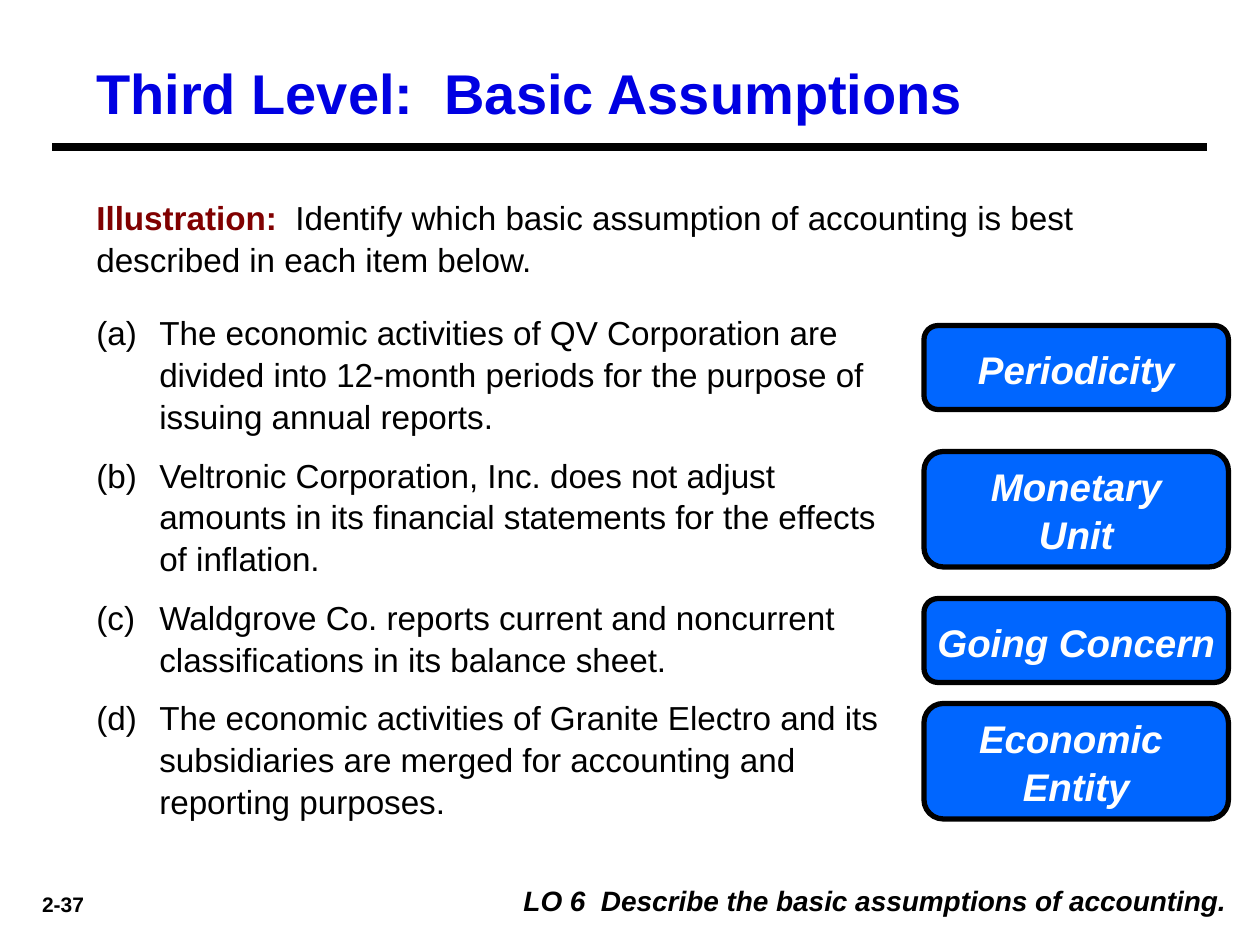
from dataclasses import dataclass

from lxml.etree import SubElement
from pptx import Presentation
from pptx.dml.color import RGBColor as RGB
from pptx.enum.shapes import MSO_CONNECTOR as CONNECTOR, MSO_SHAPE as SHAPE
from pptx.enum.text import MSO_ANCHOR as ANCHOR, PP_ALIGN as ALIGN
from pptx.oxml.ns import qn
from pptx.util import Inches, Pt


@dataclass(frozen=True)
class Theme:
    font: str = "Arial"
    ink: str = "000000"
    paper: str = "FFFFFF"
    heading: str = "0000E2"
    accent: str = "800000"
    badge: str = "0066FF"
    title_size: int = 32
    badge_size: int = 22
    body_size: int = 19
    objective_size: int = 16
    number_size: int = 12
    rule_width: float = 4.5
    badge_border: int = 3
    leading: float = 1.05


THEME = Theme()
UNIT = Inches(1) // 12
COLUMNS, ROWS = 120, 90

ITEMS = [
    "The economic activities of QV Corporation are divided into 12-month "
    "periods for the purpose of issuing annual reports.",
    "Veltronic Corporation, Inc. does not adjust amounts in its financial "
    "statements for the effects of inflation.",
    "Waldgrove Co. reports current and noncurrent classifications in its "
    "balance sheet.",
    "The economic activities of Granite Electro and its subsidiaries are "
    "merged for accounting and reporting purposes.",
]
ANSWERS = [
    (31, 8, ["Periodicity"]),
    (43, 11, ["Monetary", "Unit"]),
    (57, 8, ["Going Concern"]),
    (67, 11, ["Economic ", "Entity"]),
]


def grid(*cells):
    return [round(cell * UNIT) for cell in cells]


def add_text(paragraph, text, *, size, color=THEME.ink, bold=False, italic=False,
             align=ALIGN.LEFT, leading=THEME.leading):
    paragraph.alignment = align
    paragraph.line_spacing = leading
    run = paragraph.add_run()
    run.text = text
    font = run.font
    font.name, font.size = THEME.font, Pt(size)
    font.bold, font.italic = bold, italic
    font.color.rgb = RGB.from_string(color)


def add_frame(slide, box):
    frame = slide.shapes.add_textbox(*grid(*box)).text_frame
    frame.word_wrap = True
    return frame


def number_item(paragraph):
    properties = paragraph._p.get_or_add_pPr()
    properties.set("marL", str(Inches(0.5)))
    properties.set("indent", str(-Inches(0.5)))
    SubElement(properties, qn("a:buFont"), typeface=THEME.font)
    SubElement(properties, qn("a:buAutoNum"), type="alphaLcParenBoth")


def add_header(slide, box):
    left, top, width, height = box
    title = add_frame(slide, (left + 3, top, width - 2, height - 1.7))
    add_text(title.paragraphs[0], "Third Level:  Basic Assumptions", bold=True,
             size=THEME.title_size, color=THEME.heading, leading=1.0)
    x, y, end = grid(left, top + height, left + width)
    rule = slide.shapes.add_connector(CONNECTOR.STRAIGHT, x, y, end, y)
    rule.line.color.rgb = RGB.from_string(THEME.ink)
    rule.line.width = Pt(THEME.rule_width)
    SubElement(rule._element.spPr, qn("a:effectLst"))


def add_prompt(slide, box):
    prompt = add_frame(slide, box).paragraphs[0]
    add_text(prompt, "Illustration:  ", size=THEME.body_size,
             color=THEME.accent, bold=True)
    add_text(prompt, "Identify which basic assumption of accounting is best "
             "described in each item below.", size=THEME.body_size)


def add_items(slide, box):
    frame = add_frame(slide, box)
    for index, item in enumerate(ITEMS):
        paragraph = frame.add_paragraph() if index else frame.paragraphs[0]
        add_text(paragraph, item, size=THEME.body_size)
        paragraph.space_before = Pt(THEME.body_size / 2 if index else 0)
        number_item(paragraph)


def add_answer(slide, box, lines):
    badge = slide.shapes.add_shape(SHAPE.FLOWCHART_ALTERNATE_PROCESS, *grid(*box))
    badge.shadow.inherit = False
    badge.fill.solid()
    badge.fill.fore_color.rgb = RGB.from_string(THEME.badge)
    badge.line.color.rgb = RGB.from_string(THEME.ink)
    badge.line.width = Pt(THEME.badge_border)
    frame = badge.text_frame
    frame.word_wrap = False
    frame.vertical_anchor = ANCHOR.MIDDLE
    for index, line in enumerate(lines):
        paragraph = frame.add_paragraph() if index else frame.paragraphs[0]
        add_text(paragraph, line, size=THEME.badge_size, color=THEME.paper,
                 bold=True, italic=True, align=ALIGN.CENTER)


def add_footer(slide, box):
    left, top, width, height = box
    number = add_frame(slide, (left, top + 0.75, 10, height - 0.75))
    add_text(number.paragraphs[0], "2-37", size=THEME.number_size, bold=True,
             align=ALIGN.CENTER, leading=1.0)
    objective = add_frame(slide, (left + 34, top, width - 34, height))
    add_text(objective.paragraphs[0],
             "LO 6  Describe the basic assumptions of accounting.",
             size=THEME.objective_size, bold=True, italic=True,
             align=ALIGN.RIGHT, leading=1.0)


def main():
    deck = Presentation()
    deck.slide_width, deck.slide_height = grid(COLUMNS, ROWS)
    slide = deck.slides.add_slide(deck.slide_layouts[6])
    slide.background.fill.solid()
    slide.background.fill.fore_color.rgb = RGB.from_string(THEME.paper)
    add_footer(slide, (1, 83.6, 117, 4.4))
    add_prompt(slide, (8, 18, 106, 9))
    add_items(slide, (8, 29, 78, 49))
    for top, height, lines in ANSWERS:
        add_answer(slide, (88, top, 29, height), lines)
    add_header(slide, (5, 5, 110, 9))
    deck.save("out.pptx")


if __name__ == "__main__":
    main()
